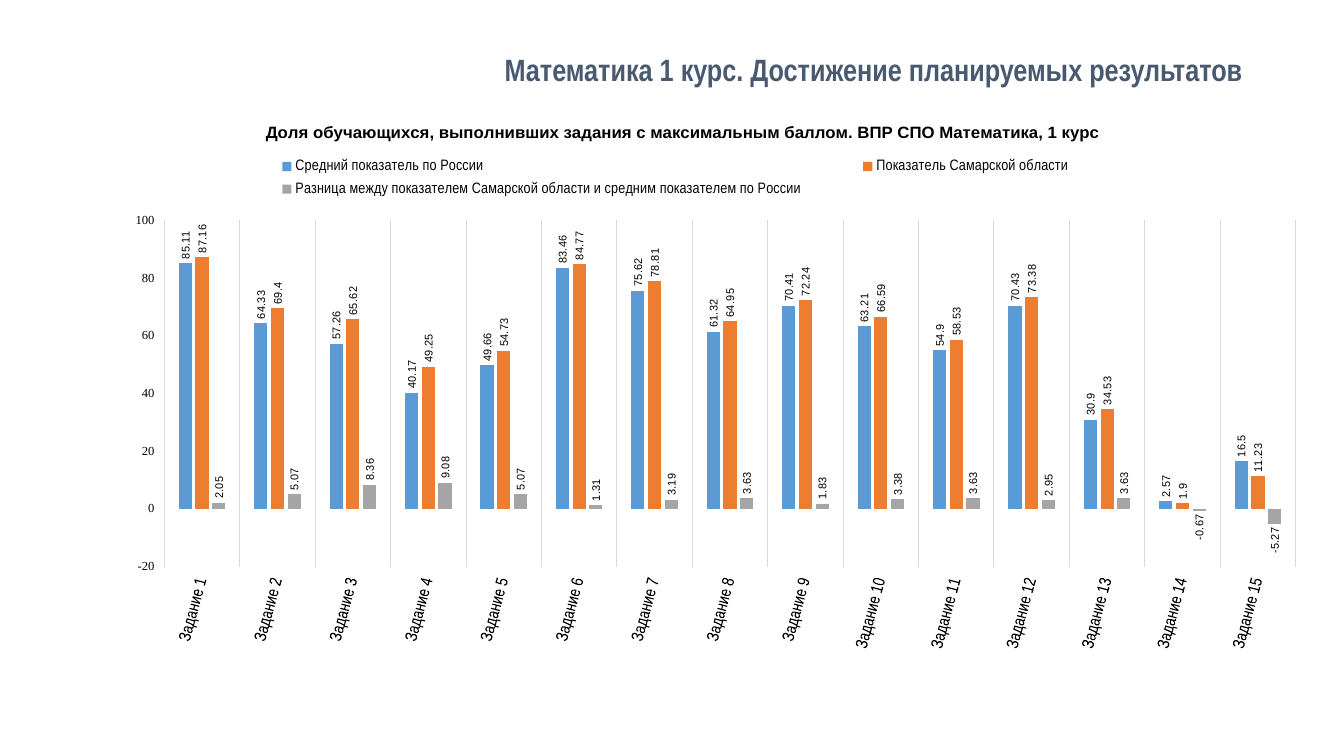
from dataclasses import dataclass

from lxml import etree
from pptx import Presentation
from pptx.chart.data import CategoryChartData
from pptx.dml.color import RGBColor
from pptx.enum.chart import (XL_CHART_TYPE, XL_LABEL_POSITION, XL_LEGEND_POSITION,
                             XL_TICK_LABEL_POSITION, XL_TICK_MARK)
from pptx.enum.text import MSO_ANCHOR, PP_ALIGN
from pptx.oxml import parse_xml
from pptx.oxml.ns import nsdecls, qn
from pptx.util import Pt

COLUMNS = XL_CHART_TYPE.COLUMN_CLUSTERED
OUTSIDE_END = XL_LABEL_POSITION.OUTSIDE_END
LEGEND_TOP = XL_LEGEND_POSITION.TOP
LABELS_LOW = XL_TICK_LABEL_POSITION.LOW
TICK_OUT, TICK_NONE = XL_TICK_MARK.OUTSIDE, XL_TICK_MARK.NONE
MIDDLE, RIGHT = MSO_ANCHOR.MIDDLE, PP_ALIGN.RIGHT
EMU_PER_PX = 9144  # 100 px to the inch

HEADING = "Математика 1 курс. Достижение планируемых результатов"
CHART_TITLE = ("Доля обучающихся, выполнивших задания с максимальным баллом. "
               "ВПР СПО Математика, 1 курс")
RUSSIA = [85.11, 64.33, 57.26, 40.17, 49.66, 83.46, 75.62, 61.32,
          70.41, 63.21, 54.9, 70.43, 30.9, 2.57, 16.5]
SAMARA = [87.16, 69.4, 65.62, 49.25, 54.73, 84.77, 78.81, 64.95,
          72.24, 66.59, 58.53, 73.38, 34.53, 1.9, 11.23]
SERIES = {
    "Средний показатель по России": RUSSIA,
    "Показатель Самарской области": SAMARA,
    "Разница между показателем Самарской области и средним показателем по России":
        [round(region - country, 2) for region, country in zip(SAMARA, RUSSIA)],
}


@dataclass(frozen=True)
class Theme:
    heading: str = "485970"
    ink: str = "000000"
    grid: str = "D9D9D9"
    series: tuple = ("5B9BD5", "ED7D31", "A5A5A5")
    narrow: str = "Arial Narrow"
    sans: str = "Arial"
    serif: str = "Times New Roman"
    heading_size: int = 22
    title_size: int = 12
    category_size: int = 12
    legend_size: int = 11
    chart_size: int = 10
    value_size: int = 9
    label_size: int = 8


def px(length):
    return length * EMU_PER_PX


def style_font(font, name, size, color, bold=False):
    font.name, font.size, font.bold = name, Pt(size), bold
    font.color.rgb = RGBColor.from_string(color)


def write_text(frame, text, align=None, line_spacing=None, **font_format):
    para = frame.paragraphs[0]
    para.alignment, para.line_spacing = align, line_spacing
    span = para.add_run()
    span.text = text
    style_font(span.font, **font_format)


def rotate_text(owner, degrees):
    """Turn the labels of an axis or a series; negative is counter-clockwise."""
    body = owner._element.find(qn("c:txPr")).find(qn("a:bodyPr"))
    body.set("rot", str(degrees * 60000))
    body.set("vert", "horz")


def place(element, after, inner=False, **fractions):
    """Give a chart part a manual layout, in fractions of the chart area."""
    for old in element.findall(qn("c:layout")):
        element.remove(old)
    layout = parse_xml(f"<c:layout {nsdecls('c')}><c:manualLayout/></c:layout>")
    settings = {"layoutTarget": "inner"} if inner else {}
    settings.update(xMode="edge", yMode="edge", **fractions)
    for name, value in settings.items():
        etree.SubElement(layout[0], qn(f"c:{name}")).set("val", str(value))
    if after is None:
        element.insert(0, layout)
    else:
        element.find(qn(after)).addnext(layout)


class Page:
    def __init__(self, deck, theme):
        self.theme = theme
        self.slide = deck.slides.add_slide(deck.slide_layouts[6])

    def text(self, left, top, width, height, text, **text_format):
        box = self.slide.shapes.add_textbox(*map(px, (left, top, width, height)))
        box.text_frame.word_wrap = True
        box.text_frame.vertical_anchor = MIDDLE
        write_text(box.text_frame, text, **text_format)

    def column_chart(self, left, top, width, height, categories, series, title):
        theme = self.theme
        data = CategoryChartData()
        data.categories = categories
        for name, values in series.items():
            data.add_series(name, values)
        chart = self.slide.shapes.add_chart(
            COLUMNS, *map(px, (left, top, width, height)), data).chart
        style_font(chart.font, theme.serif, theme.chart_size, theme.ink)

        write_text(chart.chart_title.text_frame, title, name=theme.sans,
                   size=theme.title_size, color=theme.ink, bold=True)
        chart.chart_title.include_in_layout = False
        place(chart.chart_title._element, "c:tx", x=0.14, y=0.03)
        self.legend(chart)
        self.axes(chart)
        self.columns(chart.plots[0])
        place(chart.plots[0]._element.getparent(), None, inner=True,
              x=0.059, y=0.219, w=0.932, h=0.646)

    def legend(self, chart):
        theme = self.theme
        chart.has_legend = True
        chart.legend.position = LEGEND_TOP
        chart.legend.include_in_layout = False
        style_font(chart.legend.font, theme.narrow, theme.legend_size, theme.ink)
        place(chart.legend._element, "c:legendPos", x=0.11, y=0.09, w=0.74, h=0.1)

    def axes(self, chart):
        theme = self.theme
        tasks, values = chart.category_axis, chart.value_axis
        for axis, face, size in ((tasks, theme.narrow, theme.category_size),
                                 (values, theme.serif, theme.value_size)):
            style_font(axis.tick_labels.font, face, size, theme.ink)
            axis.major_tick_mark, axis.minor_tick_mark = TICK_OUT, TICK_NONE
            axis.format.line.fill.background()
        tasks.tick_label_position = LABELS_LOW
        rotate_text(tasks, -75)
        grid = tasks.major_gridlines.format.line
        grid.width = Pt(0.75)
        grid.color.rgb = RGBColor.from_string(theme.grid)
        values.has_major_gridlines = False
        values.minimum_scale, values.maximum_scale = -20, 100
        values.major_unit = 20

    def columns(self, plot):
        theme = self.theme
        plot.vary_by_categories = False
        plot.gap_width, plot.overlap = 219, -27
        for series, color in zip(plot.series, theme.series):
            series.invert_if_negative = False
            series.format.fill.solid()
            series.format.fill.fore_color.rgb = RGBColor.from_string(color)
            labels = series.data_labels
            labels.show_value = True
            labels.position = OUTSIDE_END
            style_font(labels.font, theme.sans, theme.label_size, theme.ink)
            rotate_text(labels, -90)


def main():
    deck = Presentation()
    deck.slide_width, deck.slide_height = px(1333), px(750)
    theme = Theme()
    page = Page(deck, theme)
    page.text(92, 40, 1150, 62, HEADING, align=RIGHT, line_spacing=0.9,
              name=theme.narrow, size=theme.heading_size, color=theme.heading, bold=True)
    tasks = [f"Задание {number}" for number in range(1, len(RUSSIA) + 1)]
    page.column_chart(92, 102, 1204, 543, tasks, SERIES, CHART_TITLE)
    deck.save("out.pptx")


if __name__ == "__main__":
    main()
